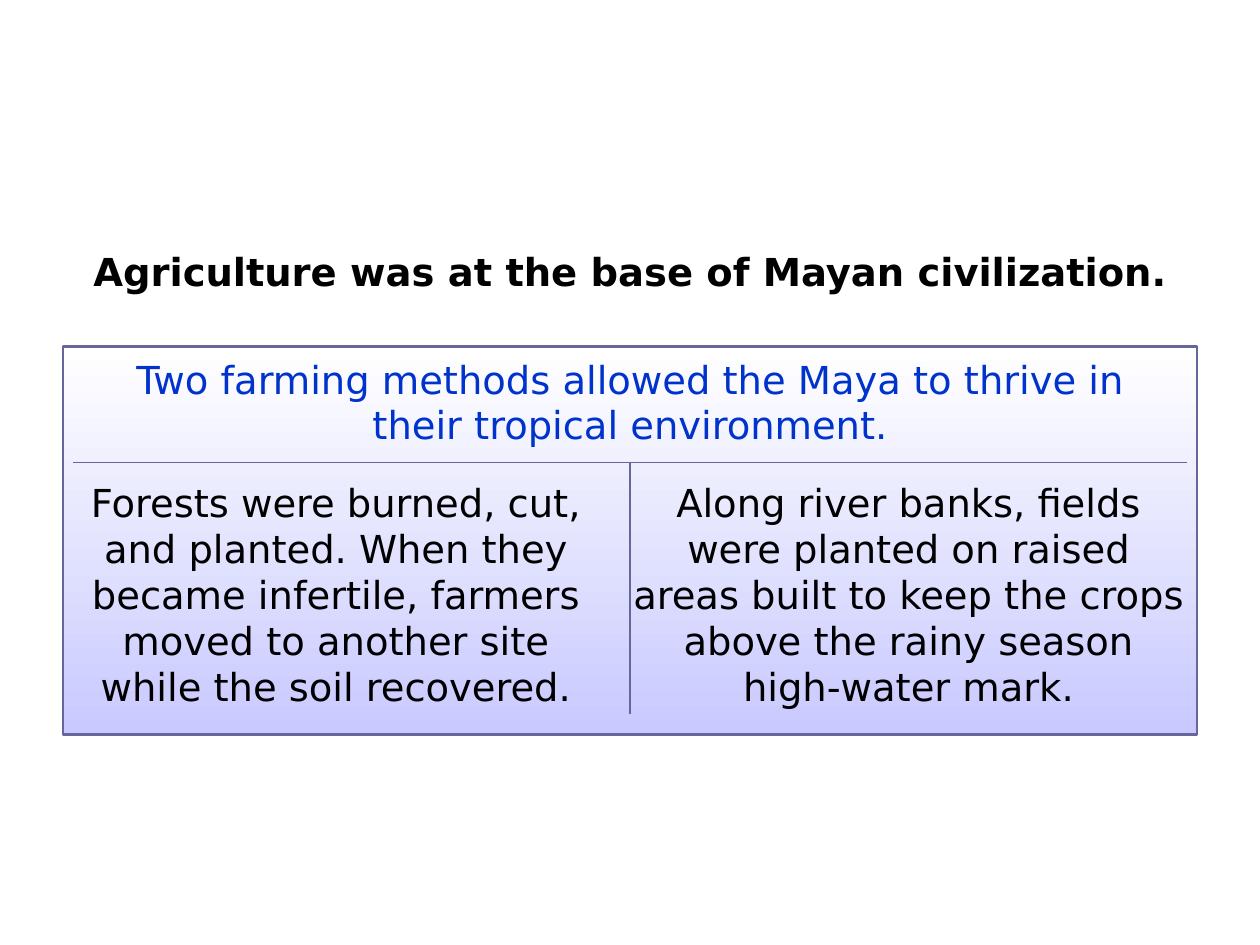
from dataclasses import dataclass

from lxml import etree
from pptx import Presentation
from pptx.dml.color import RGBColor
from pptx.enum import shapes, text
from pptx.oxml import ns
from pptx.util import Inches, Pt


@dataclass(frozen=True)
class Theme:
    font: str = "DejaVu Sans"
    size: int = 22
    ink: str = "000000"
    head: str = "0033CC"
    rule: str = "666699"
    pale: str = "FFFFFF"
    deep: str = "C9C9FF"


THEME = Theme()


def write(frame, words, color=THEME.ink, bold=False):
    frame.word_wrap = True
    frame.text = words
    para = frame.paragraphs[0]
    para.alignment = text.PP_ALIGN.CENTER
    font = para.runs[0].font
    font.name, font.size, font.bold = THEME.font, Pt(THEME.size), bold
    font.color.rgb = RGBColor.from_string(color)


def add_title(slide, box, words):
    title = slide.shapes.title
    title.left, title.top, title.width, title.height = map(Inches, box)
    frame = title.text_frame
    write(frame, words, bold=True)
    frame.auto_size = text.MSO_AUTO_SIZE.NONE
    frame.vertical_anchor = text.MSO_ANCHOR.TOP


def add_panel(slide, box):
    panel = slide.shapes.add_shape(shapes.MSO_SHAPE.RECTANGLE, *map(Inches, box))
    panel.shadow.inherit = False
    panel.fill.gradient()
    panel.fill.gradient_angle = 270
    for stop, place, color in zip(panel.fill.gradient_stops, (0, 1), (THEME.pale, THEME.deep)):
        stop.position = place
        stop.color.rgb = RGBColor.from_string(color)
    panel.line.color.rgb = RGBColor.from_string(THEME.rule)
    panel.line.width = Pt(1.5)


def set_edges(cell, drawn):
    props = cell._tc.get_or_add_tcPr()
    for spot, side in enumerate("LRTB"):
        line = etree.Element(ns.qn(f"a:ln{side}"), w=str(Pt(1)))
        if side in drawn:
            fill = etree.SubElement(line, ns.qn("a:solidFill"))
            etree.SubElement(fill, ns.qn("a:srgbClr"), val=THEME.rule)
        else:
            etree.SubElement(line, ns.qn("a:noFill"))
        props.insert(spot, line)


def add_grid(slide, box, heights, words):
    table = slide.shapes.add_table(2, 2, *map(Inches, box)).table
    table.first_row = table.horz_banding = False
    for row, height in zip(table.rows, heights):
        row.height = Inches(height)
    for cell, drawn in zip(table.iter_cells(), ("B", "B", "TR", "TL")):
        cell.fill.background()
        set_edges(cell, drawn)
    head = table.cell(0, 0)
    head.merge(table.cell(0, 1))
    head.vertical_anchor = text.MSO_ANCHOR.MIDDLE
    write(head.text_frame, words, THEME.head)


def add_note(slide, box, words):
    note = slide.shapes.add_textbox(*map(Inches, box))
    write(note.text_frame, words)


def main():
    deck = Presentation()
    deck.slide_width, deck.slide_height = Inches(10), Inches(7.5)
    slide = deck.slides.add_slide(deck.slide_layouts[5])
    add_title(slide, (0.5, 1.92, 9, 0.47), "Agriculture was at the base of Mayan civilization.")
    add_panel(slide, (0.5, 2.75, 9, 3.08))
    add_grid(slide, (0.58, 2.74, 8.84, 2.93), (0.93, 2),
             "Two farming methods allowed the Maya to thrive in their tropical environment.")
    add_note(slide, (0.5, 3.75, 4.33, 1.93),
             "Forests were burned, cut, and planted. When they became infertile, "
             "farmers moved to another site while the soil recovered.")
    add_note(slide, (4.92, 3.75, 4.58, 1.93),
             "Along river banks, fields were planted on raised areas built to keep "
             "the crops above the rainy season high-water mark.")
    deck.save("out.pptx")


if __name__ == "__main__":
    main()
